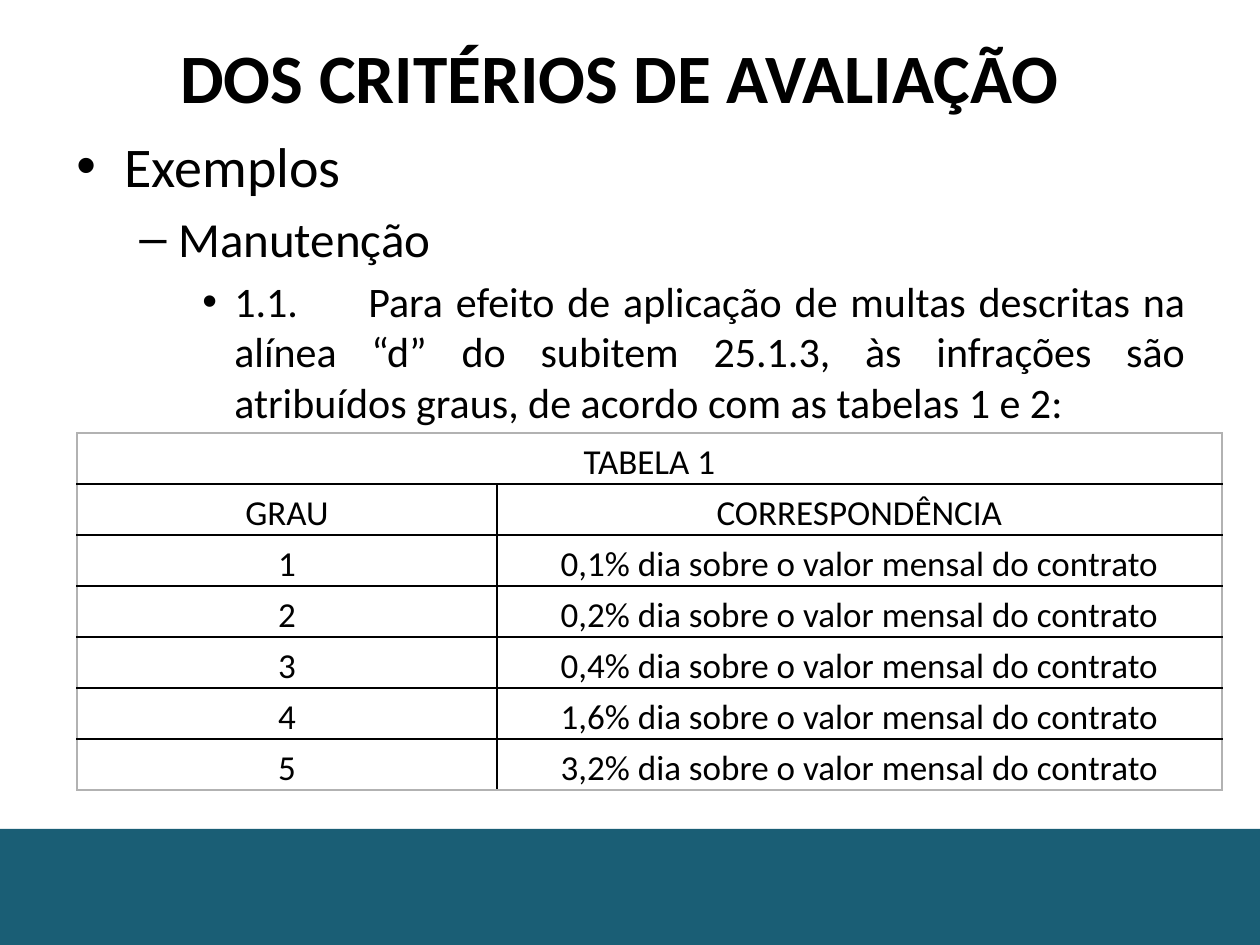
from lxml import etree
from pptx import Presentation
from pptx.dml.color import RGBColor
from pptx.enum.shapes import MSO_SHAPE
from pptx.enum.text import MSO_ANCHOR, PP_ALIGN
from pptx.oxml.ns import qn
from pptx.util import Emu, Pt

RECTANGLE = MSO_SHAPE.RECTANGLE
MIDDLE, BOTTOM, TOP = MSO_ANCHOR.MIDDLE, MSO_ANCHOR.BOTTOM, MSO_ANCHOR.TOP
CENTER, JUSTIFY = PP_ALIGN.CENTER, PP_ALIGN.JUSTIFY
TITLE_ONLY = 5
PIXELS_PER_INCH = 126
FONT = "Calibri"
BLACK, GREY, TEAL = "000000", "B2B2B2", "1A5E75"

OUTLINE = [
    ("Exemplos", "•", 32, 48, 48),
    ("Manutenção", "–", 28, 102, 39),
    ("1.1.\tPara efeito de aplicação de multas descritas na alínea “d” do "
     "subitem 25.1.3, às infrações são atribuídos graus, de acordo com as "
     "tabelas 1 e 2:", "•", 24, 158, 32),
]
RATES = ["0,1%", "0,2%", "0,4%", "1,6%", "3,2%"]
COLUMN_WIDTHS = [420, 725]
ROW_HEIGHT = 51
TAB_POSITION = 292


def px(length):
    """Turn pixels into EMU."""
    return Emu(round(length * 914400 / PIXELS_PER_INCH))


def color(value):
    """Turn a hex string into a colour."""
    return RGBColor.from_string(value)


def format_text(para, size, align, bold=False):
    """Format a paragraph and all of its runs."""
    para.alignment = align
    for span in para.runs:
        span.font.name = FONT
        span.font.size = Pt(size)
        span.font.bold = bold
        span.font.color.rgb = color(BLACK)


def add_band(page, left, top, width, height):
    """Add the plain coloured band at the foot of the page."""
    band = page.shapes.add_shape(RECTANGLE, px(left), px(top), px(width), px(height))
    band.shadow.inherit = False
    band.fill.solid()
    band.fill.fore_color.rgb = color(TEAL)
    band.line.fill.background()


def set_title(page, text, left, top, width, height):
    """Place and format the title."""
    title = page.shapes.title
    title.left, title.top = px(left), px(top)
    title.width, title.height = px(width), px(height)
    title.text_frame.text = text
    title.text_frame.vertical_anchor = MIDDLE
    format_text(title.text_frame.paragraphs[0], 39.6, CENTER, True)


def add_bullet(para, mark, margin, hanging):
    """Give a paragraph a hanging bullet and a tab stop."""
    properties = para._p.get_or_add_pPr()
    properties.set("marL", str(px(margin)))
    properties.set("indent", str(-px(hanging)))
    etree.SubElement(properties, qn("a:buFont"), typeface="Arial")
    etree.SubElement(properties, qn("a:buChar"), char=mark)
    tabs = etree.SubElement(properties, qn("a:tabLst"))
    etree.SubElement(tabs, qn("a:tab"), pos=str(px(TAB_POSITION)), algn="l")


def add_outline(page, left, top, width, height):
    """Add the bulleted text, one level per paragraph."""
    box = page.shapes.add_textbox(px(left), px(top), px(width), px(height))
    frame = box.text_frame
    frame.word_wrap = True
    frame.vertical_anchor = TOP
    for level, (text, mark, size, margin, hanging) in enumerate(OUTLINE):
        para = frame.add_paragraph() if level else frame.paragraphs[0]
        para.text = text
        para.level = level
        add_bullet(para, mark, margin, hanging)
        if level:
            para.space_before = Pt(size * 0.2)
        format_text(para, size, JUSTIFY)


def set_borders(cell, outer_sides):
    """Draw the cell's borders, grey on the outer sides of the table."""
    properties = cell._tc.get_or_add_tcPr()
    for side in "LRTB":
        line = etree.SubElement(properties, qn(f"a:ln{side}"), w=str(Pt(1)))
        fill = etree.SubElement(line, qn("a:solidFill"))
        shade = GREY if side in outer_sides else BLACK
        etree.SubElement(fill, qn("a:srgbClr"), val=shade)


def format_cell(cell, text, outer_sides):
    """Fill in and format one cell."""
    set_borders(cell, outer_sides)
    cell.fill.background()
    cell.vertical_anchor = BOTTOM
    cell.margin_left = cell.margin_right = cell.margin_top = px(1)
    cell.margin_bottom = 0
    cell.text_frame.text = text
    format_text(cell.text_frame.paragraphs[0], 20, CENTER)


def add_grade_table(page, left, top):
    """Add the table of grades and their daily rates."""
    rows = [("TABELA 1", ""), ("GRAU", "CORRESPONDÊNCIA")]
    rows += [(str(grade), f"{rate} dia sobre o valor mensal do contrato")
             for grade, rate in enumerate(RATES, 1)]
    frame = page.shapes.add_table(
        len(rows), len(COLUMN_WIDTHS), px(left), px(top),
        px(sum(COLUMN_WIDTHS)), px(ROW_HEIGHT * len(rows)))
    table = frame.table
    table.first_row = table.horz_banding = False
    for column, width in zip(table.columns, COLUMN_WIDTHS):
        column.width = px(width)
    table.cell(0, 0).merge(table.cell(0, 1))
    for index, texts in enumerate(rows):
        table.rows[index].height = px(ROW_HEIGHT)
        edge = {0: "T", len(rows) - 1: "B"}.get(index, "")
        for column, text in enumerate(texts):
            side = "LR" if index == 0 else "LR"[column]
            format_cell(table.cell(index, column), text, edge + side)


def main():
    """Build the slide and save it."""
    deck = Presentation()
    deck.slide_width, deck.slide_height = px(1260), px(945)
    page = deck.slides.add_slide(deck.slide_layouts[TITLE_ONLY])
    add_band(page, 0, 829, 1260, 116)
    add_outline(page, 64, 125, 1134, 624)
    set_title(page, "DOS CRITÉRIOS DE AVALIAÇÃO", 64, 26, 1111, 100)
    add_grade_table(page, 77, 433)
    deck.save("out.pptx")


if __name__ == "__main__":
    main()
